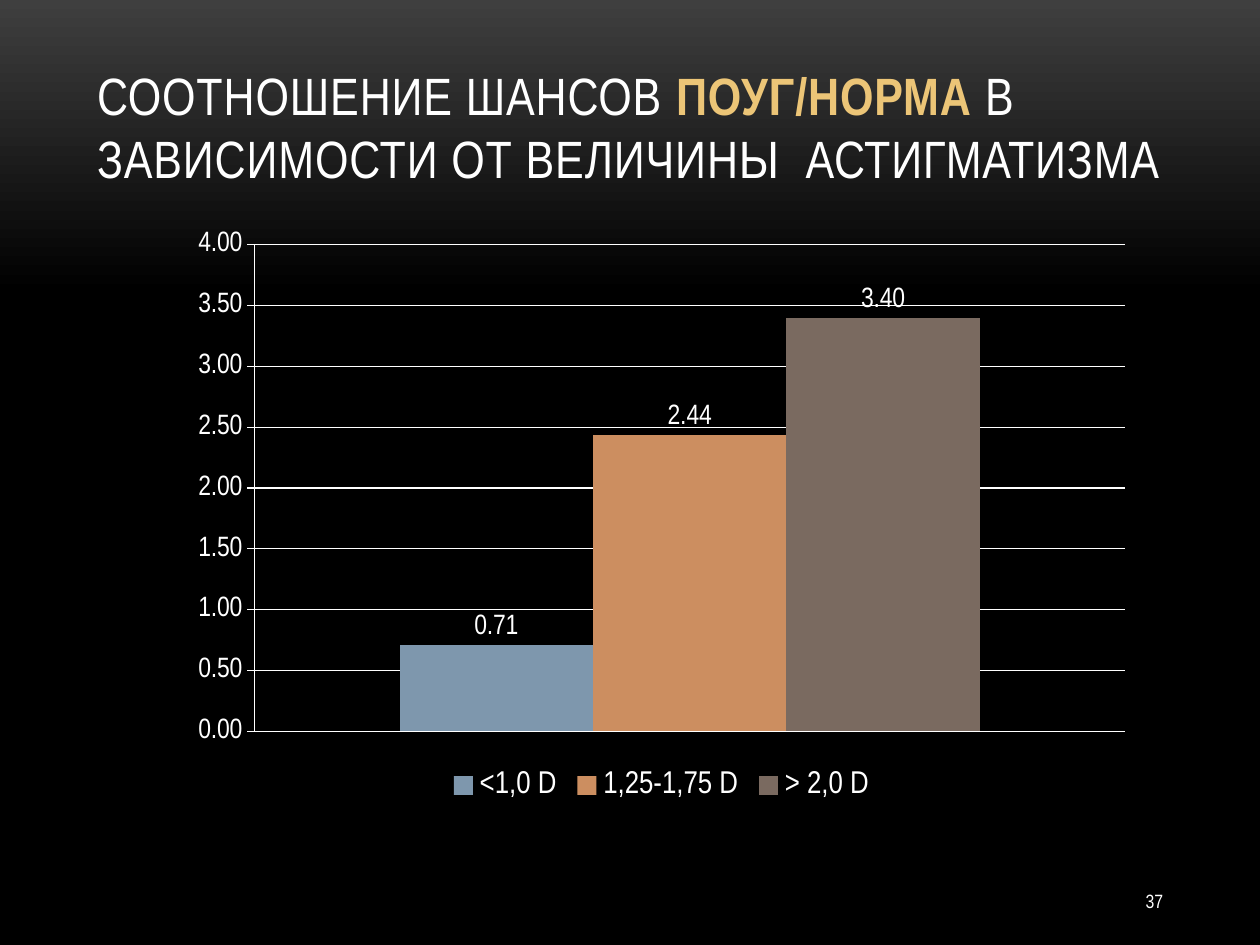
from pptx import Presentation
from pptx.chart.data import CategoryChartData
from pptx.dml.color import RGBColor
from pptx.enum.chart import XL_CHART_TYPE as ChartType, XL_LABEL_POSITION as LabelPosition
from pptx.enum.chart import XL_LEGEND_POSITION as LegendPosition, XL_TICK_MARK as TickMark
from pptx.enum.text import MSO_ANCHOR as Anchor, MSO_AUTO_SIZE as AutoSize, PP_ALIGN as Align
from pptx.util import Inches, Pt


def color(hex_code):
    return RGBColor.from_string(hex_code)


class OddsSlide:
    FONT = "Arial Narrow"
    TEXT = "FFFFFF"
    ACCENT = "ECC577"

    def __init__(self, presentation):
        self.slide = presentation.slides.add_slide(presentation.slide_layouts[5])

    def style(self, font, size):
        font.name = self.FONT
        font.size = Pt(size)
        font.color.rgb = color(self.TEXT)

    def place(self, shape, left, top, width, height):
        shape.left, shape.top = Inches(left), Inches(top)
        shape.width, shape.height = Inches(width), Inches(height)

    def background(self, top_color, bottom_color, fade_end):
        fill = self.slide.background.fill
        fill.gradient()
        fill.gradient_angle = 270
        stops = zip(fill.gradient_stops, (0, fade_end), (top_color, bottom_color))
        for stop, position, stop_color in stops:
            stop.position = position
            stop.color.rgb = color(stop_color)

    def title(self, parts, box, size):
        heading = self.slide.shapes.title
        self.place(heading, *box)
        frame = heading.text_frame
        frame.auto_size = AutoSize.NONE
        frame.word_wrap = True
        frame.vertical_anchor = Anchor.BOTTOM
        paragraph = frame.paragraphs[0]
        paragraph.alignment = Align.LEFT
        self.style(paragraph.font, size)
        for text, highlighted in parts:
            run = paragraph.add_run()
            run.text = text
            self.style(run.font, size)
            run.font.bold = highlighted
            if highlighted:
                run.font.color.rgb = color(self.ACCENT)
            run.font._element.set("spc", "50")

    def page_number(self, number, box, size):
        frame = self.slide.shapes.add_textbox(*map(Inches, box)).text_frame
        frame.word_wrap = True
        frame.vertical_anchor = Anchor.MIDDLE
        paragraph = frame.paragraphs[0]
        paragraph.text = number
        paragraph.alignment = Align.RIGHT
        self.style(paragraph.font, size)

    def column_chart(self, groups, box):
        data = CategoryChartData(number_format="0.00")
        data.categories = ["1"]
        for name, odds, _ in groups:
            data.add_series(name, [odds])
        chart = self.slide.shapes.add_chart(
            ChartType.COLUMN_CLUSTERED, *map(Inches, box), data).chart
        self.style(chart.font, 10)
        chart.has_title = False
        chart.has_legend = True
        chart.legend.position = LegendPosition.BOTTOM
        chart.legend.include_in_layout = False
        self.style(chart.legend.font, 18)

        chart.category_axis.visible = False
        odds_axis = chart.value_axis
        odds_axis.minimum_scale, odds_axis.maximum_scale = 0, 4
        odds_axis.major_unit = 0.5
        odds_axis.major_tick_mark = TickMark.OUTSIDE
        odds_axis.has_major_gridlines = True
        odds_axis.tick_labels.number_format = "0.00"
        odds_axis.tick_labels.number_format_is_linked = False
        self.style(odds_axis.tick_labels.font, 16)
        for line in (odds_axis.format.line, odds_axis.major_gridlines.format.line):
            line.color.rgb = color(self.TEXT)
            line.width = Pt(0.75)

        plot = chart.plots[0]
        plot.gap_width = 150
        plot.overlap = 0
        plot.vary_by_categories = False
        for series, (_, _, fill_color) in zip(plot.series, groups):
            series.format.fill.solid()
            series.format.fill.fore_color.rgb = color(fill_color)
            labels = series.data_labels
            labels.show_value = True
            labels.position = LabelPosition.OUTSIDE_END
            labels.number_format = "0.00"
            labels.number_format_is_linked = False
            self.style(labels.font, 16)


def main():
    presentation = Presentation()
    presentation.slide_width, presentation.slide_height = Inches(10), Inches(7.5)
    odds_slide = OddsSlide(presentation)
    odds_slide.background("3F3F3F", "000000", 0.31)
    odds_slide.title(
        [("СООТНОШЕНИЕ ШАНСОВ ", False),
         ("ПОУГ/НОРМА", True),
         (" В ЗАВИСИМОСТИ ОТ ВЕЛИЧИНЫ  АСТИГМАТИЗМА", False)],
        (0.67, 0.3, 9.07, 1.25), 30)
    odds_slide.page_number("37", (8.25, 6.95, 1.08, 0.4), 11)
    odds_slide.column_chart(
        [("<1,0 D", 0.71, "7E97AD"),
         ("1,25-1,75 D", 2.44, "CC8E60"),
         ("> 2,0 D", 3.4, "7A6A60")],
        (1.42, 1.75, 7.66, 4.65))
    presentation.save("out.pptx")


if __name__ == "__main__":
    main()
